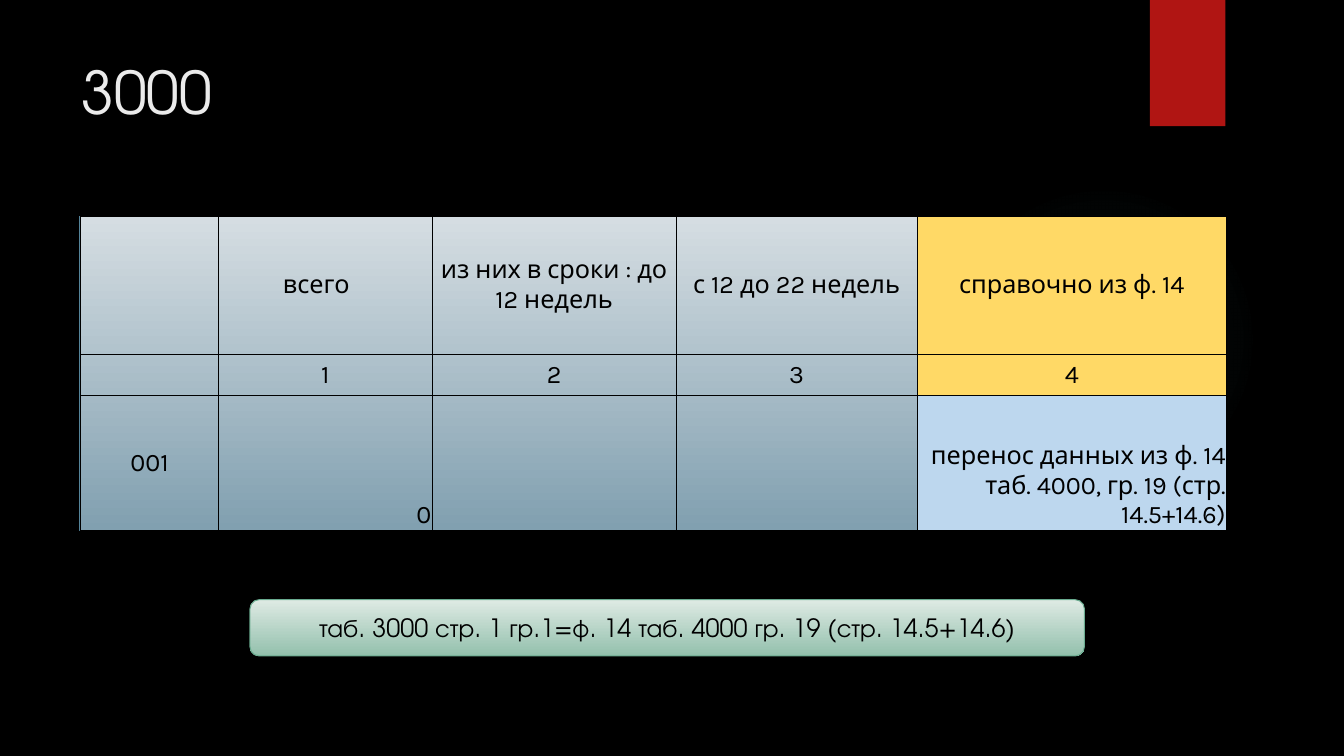
"""Builds the slide for table 3000 with its check rule."""
from lxml import etree
from pptx import Presentation
from pptx.dml.color import RGBColor
from pptx.enum import shapes, text
from pptx.oxml import ns
from pptx.util import Cm, Pt

BLACK = RGBColor(0x00, 0x00, 0x00)
WHITE = RGBColor(0xEB, 0xEB, 0xEB)
RED = RGBColor(0xB0, 0x15, 0x13)
TEAL = RGBColor(0x50, 0xB9, 0xC1)
YELLOW = RGBColor(0xFF, 0xD9, 0x66)
BLUE = RGBColor(0xBD, 0xD7, 0xEE)
STEEL_LIGHT = RGBColor(0xD5, 0xDD, 0xE2)
STEEL_DARK = RGBColor(0x81, 0xA0, 0xB0)
STEEL_LINE = RGBColor(0x54, 0x84, 0x9A)
GREEN_LIGHT = RGBColor(0xDE, 0xEA, 0xE4)
GREEN_DARK = RGBColor(0x93, 0xC0, 0xAC)
GREEN_LINE = RGBColor(0x6A, 0xAC, 0x90)

HEAD_FONT, TABLE_FONT = "TeX Gyre Adventor", "Karla"
TITLE = "3000"
RULE = "таб. 3000 стр. 1 гр.1=ф. 14 таб. 4000 гр. 19 (стр. 14.5+14.6)"
ROWS = [
    ["", "всего", "из них в сроки : до 12 недель", "с 12 до 22 недель", "справочно из ф. 14"],
    ["", "1", "2", "3", "4"],
    ["001", "0", "", "", "перенос данных из ф. 14 таб. 4000, гр. 19 (стр. 14.5+14.6)"],
]
COL_WIDTHS = [3.48, 5.38, 6.15, 6.07, 7.8]
ROW_HEIGHTS = [3.48, 1.04, 3.4]
LAST_COL_FILLS = [YELLOW, YELLOW, BLUE]
GLOW_STOPS = [(0, 7), (36, 6), (69, 0)]


def add_box(s, kind, box):
    """Add a shape without shadow or line."""
    sp = s.shapes.add_shape(kind, *map(Cm, box))
    sp.shadow.inherit = False
    sp.line.fill.background()
    return sp


def add_gradient_box(s, kind, box, colors, line):
    """Add an outlined shape shaded from top to bottom."""
    sp = add_box(s, kind, box)
    sp.fill.gradient()
    sp.fill.gradient_angle = 270
    for stop, position, color in zip(sp.fill.gradient_stops, (0, 1), colors):
        stop.position = position
        stop.color.rgb = color
    sp.line.color.rgb = line
    sp.line.width = Pt(0.75)
    return sp


def add_glow(s, box):
    """Add a faint round glow."""
    sp = add_box(s, shapes.MSO_SHAPE.OVAL, box)
    stops = "".join(
        f'<a:gs pos="{pos * 1000}"><a:srgbClr val="{TEAL}">'
        f'<a:alpha val="{alpha * 1000}"/></a:srgbClr></a:gs>'
        for pos, alpha in GLOW_STOPS)
    grad = etree.fromstring(
        f'<a:gradFill {ns.nsdecls("a")}><a:gsLst>{stops}</a:gsLst><a:path path="circle">'
        '<a:fillToRect l="50000" t="50000" r="50000" b="50000"/></a:path></a:gradFill>')
    sp._element.spPr.find(ns.qn("a:prstGeom")).addnext(grad)


def set_text(tf, words, align, font, size, color):
    """Write one formatted paragraph."""
    tf.text = words
    p = tf.paragraphs[0]
    p.alignment = align
    p.font.name, p.font.size = font, Pt(size)
    p.font.color.rgb = color


def set_borders(cell):
    """Draw thin black lines on all four sides of a cell."""
    for i, side in enumerate(("lnL", "lnR", "lnT", "lnB")):
        line = etree.fromstring(
            f'<a:{side} {ns.nsdecls("a")} w="6350"><a:solidFill>'
            f'<a:srgbClr val="{BLACK}"/></a:solidFill></a:{side}>')
        cell._tc.get_or_add_tcPr().insert(i, line)


def add_data_table(s, left, top):
    """Add the table of counts."""
    size = Cm(sum(COL_WIDTHS)), Cm(sum(ROW_HEIGHTS))
    table = s.shapes.add_table(len(ROWS), len(COL_WIDTHS), Cm(left), Cm(top), *size).table
    table.first_row = table.horz_banding = False
    for col, width in zip(table.columns, COL_WIDTHS):
        col.width = Cm(width)
    for row, height in zip(table.rows, ROW_HEIGHTS):
        row.height = Cm(height)
    last = len(COL_WIDTHS) - 1
    for r, row in enumerate(ROWS):
        for c, words in enumerate(row):
            cell = table.cell(r, c)
            low = r == len(ROWS) - 1 and c > 0
            cell.margin_left = cell.margin_right = cell.margin_top = Cm(0.02)
            cell.margin_bottom = 0
            cell.vertical_anchor = text.MSO_ANCHOR.BOTTOM if low else text.MSO_ANCHOR.MIDDLE
            align = text.PP_ALIGN.RIGHT if low else text.PP_ALIGN.CENTER
            set_text(cell.text_frame, words, align, TABLE_FONT, 18, BLACK)
            if c == last:
                cell.fill.solid()
                cell.fill.fore_color.rgb = LAST_COL_FILLS[r]
            else:
                cell.fill.background()
            set_borders(cell)
    table.cell(0, 1).margin_right = Cm(0.48)


def main():
    """Build and save the slide."""
    prs = Presentation()
    prs.slide_width, prs.slide_height = Cm(33.87), Cm(19.05)
    s = prs.slides.add_slide(prs.slide_layouts[5])
    s.background.fill.solid()
    s.background.fill.fore_color.rgb = BLACK

    title = s.shapes.title
    title.left, title.top, title.width, title.height = map(Cm, (1.8, 1.27, 26.14, 3.89))
    tf = title.text_frame
    tf.auto_size = text.MSO_AUTO_SIZE.NONE
    tf.vertical_anchor = text.MSO_ANCHOR.TOP
    set_text(tf, TITLE, text.PP_ALIGN.LEFT, HEAD_FONT, 42, WHITE)

    add_glow(s, (23.9, 4.65, 7.82, 7.82))
    tab = add_box(s, shapes.MSO_SHAPE.RECTANGLE, (28.98, 0, 1.9, 3.18))
    tab.fill.solid()
    tab.fill.fore_color.rgb = RED

    add_gradient_box(s, shapes.MSO_SHAPE.RECTANGLE, (2.01, 5.46, 28.9, 7.9),
                     (STEEL_LIGHT, STEEL_DARK), STEEL_LINE)
    add_data_table(s, 2.03, 5.44)

    rule = add_gradient_box(s, shapes.MSO_SHAPE.ROUNDED_RECTANGLE, (6.3, 15.11, 21.03, 1.42),
                            (GREEN_LIGHT, GREEN_DARK), GREEN_LINE)
    rule.text_frame.word_wrap = True
    rule.text_frame.vertical_anchor = text.MSO_ANCHOR.MIDDLE
    set_text(rule.text_frame, RULE, text.PP_ALIGN.CENTER, HEAD_FONT, 18, BLACK)
    prs.save("out.pptx")


if __name__ == "__main__":
    main()
